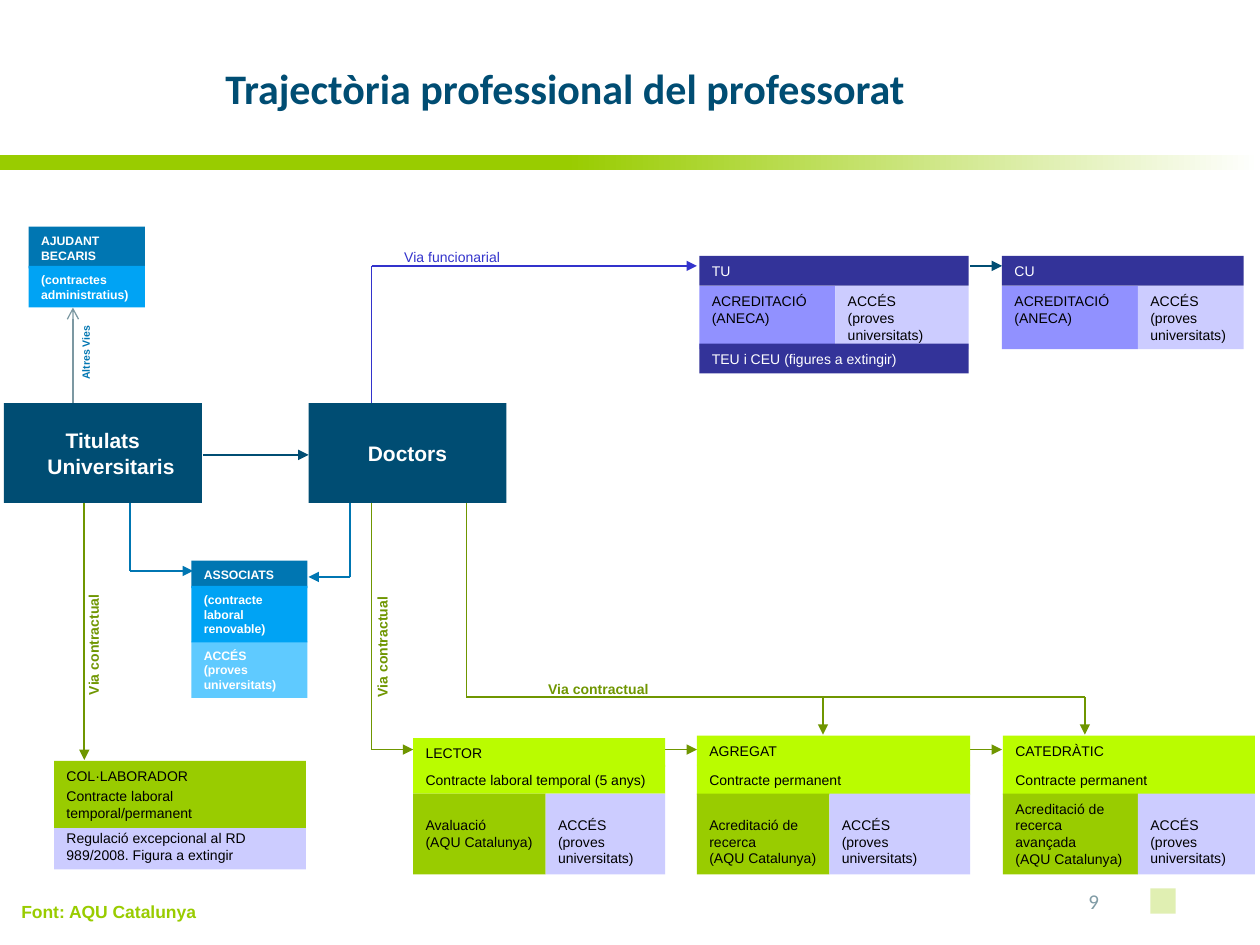
from itertools import pairwise

from lxml import etree
from pptx import Presentation
from pptx.dml.color import RGBColor
from pptx.enum.shapes import MSO_CONNECTOR as Connector, MSO_SHAPE as Shape
from pptx.enum.text import MSO_ANCHOR as Anchor, PP_ALIGN as Align
from pptx.oxml.ns import qn
from pptx.util import Cm, Pt

COLORS = {
    "navy": "004D73", "blue": "0076B2", "sky": "00A3F4", "pale_sky": "5FCAFF",
    "indigo": "333399", "violet": "9191FF", "lavender": "CCCCFF", "royal": "3333CC",
    "green": "99CC00", "lime": "BAFC00", "olive": "6F9600",
    "grey": "7C98A2", "slate": "809BA5", "white": "FFFFFF", "black": "000000",
}
LINE_HEIGHT = 0.33  # one 8 pt line, in cm

# Each card: left, width, text size, bold, rows.
# Each row: top, height, cells. Each cell: text, width (None = rest), fill,
# text colour, lines left free above the text.
ACCESS = "ACCÉS\n(proves universitats)"


def career_row(text, split, free_lines=1):
    return (16, 1.63, [(text, split, "green", "black", free_lines),
                       (ACCESS, None, "lavender", "black", 1)])


def full_row(top, height, text, fill, color="black"):
    return (top, height, [(text, None, fill, color, 0)])


STATE_ACCESS = (5.77, 1.27, [
    ("ACREDITACIÓ\n(ANECA)", 2.74, "violet", "black", 0),
    ("ACCÉS\n(proves\nuniversitats)", None, "lavender", "black", 0),
])
CARDS = [
    (0.58, 2.34, 7, True, [
        full_row(4.57, 0.84, "AJUDANT\nBECARIS", "blue", "white"),
        full_row(5.36, 0.84, "(contractes administratius)", "sky", "white"),
    ]),
    (3.86, 2.34, 7, True, [
        full_row(12.93, 1.14, "ACCÉS\n(proves\nuniversitats)", "pale_sky", "white"),
        full_row(11.3, 0.56, "ASSOCIATS", "blue", "white"),
        full_row(11.81, 1.14, "(contracte laboral renovable)", "sky", "white"),
    ]),
    (14.1, 5.43, 8, False, [
        full_row(5.16, 0.6, "TU", "indigo", "white"),
        STATE_ACCESS,
        full_row(6.93, 0.6, "TEU i CEU (figures a extingir)", "indigo", "white"),
    ]),
    (20.2, 4.87, 8, False, [
        full_row(5.16, 0.6, "CU", "indigo", "white"),
        STATE_ACCESS,
    ]),
    (1.09, 5.08, 8, False, [
        full_row(15.34, 0.58, "COL·LABORADOR", "green"),
        full_row(16.59, 0.94, "Regulació excepcional al RD 989/2008. Figura a extingir",
                 "lavender"),
        full_row(15.75, 0.94, "Contracte laboral temporal/permanent", "green"),
    ]),
    (8.33, 5.08, 8, False, [
        full_row(14.88, 0.58, "LECTOR", "lime"),
        full_row(15.42, 0.58, "Contracte laboral temporal (5 anys)", "lime"),
        career_row("Avaluació\n(AQU Catalunya)", 2.67),
    ]),
    (14.05, 5.51, 8, False, [
        full_row(14.83, 0.6, "AGREGAT", "lime"),
        full_row(15.42, 0.6, "Contracte permanent", "lime"),
        career_row("Acreditació de\nrecerca\n(AQU Catalunya)", 2.67),
    ]),
    (20.22, 5.08, 8, False, [
        full_row(14.83, 0.6, "CATEDRÀTIC", "lime"),
        full_row(15.42, 0.6, "Contracte permanent", "lime"),
        career_row("Acreditació de\nrecerca\navançada\n(AQU Catalunya)", 2.72, 0),
    ]),
]

STAGES = [("Titulats\nUniversitaris", 0.08), ("Doctors", 6.22)]

# Each route: points, colour, line width, arrowhead at the last point.
ROUTES = [
    ([(4.09, 9.17), (6.22, 9.17)], "navy", 1.25, "triangle"),
    ([(1.47, 8.13), (1.47, 6.2)], "grey", 0.75, "arrow"),
    ([(1.7, 10.13), (1.7, 15.32)], "olive", 1, "triangle"),
    ([(2.62, 10.13), (2.62, 11.51), (3.89, 11.51)], "blue", 1, "triangle"),
    ([(7.06, 10.13), (7.06, 11.63), (6.22, 11.63)], "blue", 1, "triangle"),
    ([(7.49, 8.13), (7.49, 5.36), (14.05, 5.36)], "royal", 1, "triangle"),
    ([(7.49, 10.13), (7.49, 15.11), (8.33, 15.11)], "olive", 1, "triangle"),
    ([(9.4, 10.13), (9.4, 14.05), (21.87, 14.05), (21.87, 14.81)],
     "olive", 0.75, "triangle"),
    ([(16.59, 14.05), (16.59, 14.81)], "olive", 0.75, "triangle"),
    ([(13.41, 15.11), (14.05, 15.11)], "olive", 1, "triangle"),
    ([(19.56, 15.11), (20.2, 15.11)], "olive", 0.75, "triangle"),
    ([(19.56, 5.36), (20.2, 5.36)], "navy", 0.75, "triangle"),
]

# Each label: text, box, size, bold, colour, rotation, font.
LABELS = [
    ("Via funcionarial", (7.9, 4.88, 2.46, 0.58), 8, False, "royal", 0, "Arial"),
    ("Via contractual", (10.8, 13.59, 2.54, 0.58), 8, True, "olive", 0, "Arial"),
    ("Via contractual", (6.43, 12.75, 2.54, 0.58), 8, True, "olive", 270, "Arial"),
    ("Via contractual", (0.61, 12.7, 2.54, 0.58), 8, True, "olive", 270, "Arial"),
    ("Altres Vies", (0.89, 6.81, 1.68, 0.51), 6, True, "blue", 270, "Arial"),
    ("Font: AQU Catalunya", (0.18, 18.03, 4.06, 0.69), 10, True, "green", 0, "Arial"),
    ("9", (21.69, 17.65, 1.4, 1.02), 12, False, "slate", 0, "Calibri"),
]


def rgb(name):
    return RGBColor.from_string(COLORS[name])


def write(shape, text, size, color, bold=False, font="Arial", align=Align.LEFT):
    shape.text_frame.text = text
    for paragraph in shape.text_frame.paragraphs:
        paragraph.alignment = align
        for run in paragraph.runs:
            run.font.name, run.font.size, run.font.bold = font, Pt(size), bold
            run.font.color.rgb = rgb(color)


def add_box(slide, left, top, width, height, fill):
    box = slide.shapes.add_shape(Shape.RECTANGLE, Cm(left), Cm(top), Cm(width), Cm(height))
    box.shadow.inherit = False
    box.line.fill.background()
    box.fill.solid()
    box.fill.fore_color.rgb = rgb(fill)
    box.text_frame.word_wrap = True
    box.text_frame.vertical_anchor = Anchor.TOP
    return box


def add_band(slide):
    band = add_box(slide, 0, 3.12, 25.4, 0.3, "green")
    band.fill.gradient()
    band.fill.gradient_angle = 0
    for stop, (position, color) in zip(band.fill.gradient_stops,
                                       [(0.45, "green"), (1, "white")]):
        stop.position = position
        stop.color.rgb = rgb(color)
    marker = add_box(slide, 23.19, 17.91, 0.51, 0.51, "green")
    tint = marker.fill._xPr.find(".//" + qn("a:srgbClr"))
    etree.SubElement(tint, qn("a:alpha"), val="30000")


def add_title(slide):
    title = slide.shapes.title
    title.left, title.top, title.width, title.height = Cm(4.29), Cm(0.96), Cm(19.41), Cm(1.6)
    title.text_frame.vertical_anchor = Anchor.MIDDLE
    write(title, "Trajectòria professional del professorat", 24, "navy", True, "Calibri")


def add_card(slide, left, width, size, bold, rows):
    for top, height, cells in rows:
        x = left
        for text, cell_width, fill, color, free_lines in cells:
            cell_width = cell_width or left + width - x
            box = add_box(slide, x, top, cell_width, height, fill)
            box.text_frame.margin_top = Cm(0.13 + free_lines * LINE_HEIGHT)
            write(box, text, size, color, bold)
            x += cell_width


def add_stage(slide, text, left):
    box = add_box(slide, left, 8.13, 3.99, 2.01, "navy")
    box.text_frame.vertical_anchor = Anchor.MIDDLE
    write(box, text, 12, "white", True, align=Align.CENTER)
    for paragraph in box.text_frame.paragraphs[1:]:
        paragraph._p.get_or_add_pPr().set("marL", str(Cm(0.33)))


def add_route(slide, points, color, width, head):
    for start, end in pairwise(points):
        line = slide.shapes.add_connector(Connector.STRAIGHT, *map(Cm, start + end))
        line.line.color.rgb = rgb(color)
        line.line.width = Pt(width)
        if end == points[-1]:
            etree.SubElement(line.line._get_or_add_ln(), qn("a:tailEnd"), type=head)
        etree.SubElement(line._element.spPr, qn("a:effectLst"))


def add_label(slide, text, box, size, bold, color, rotation, font):
    label = slide.shapes.add_textbox(*map(Cm, box))
    label.rotation = rotation
    label.text_frame.word_wrap = False
    label.text_frame.vertical_anchor = Anchor.MIDDLE
    write(label, text, size, color, bold, font)


def main():
    deck = Presentation()
    deck.slide_width, deck.slide_height = Cm(25.4), Cm(19.05)
    slide = deck.slides.add_slide(deck.slide_layouts[5])
    add_band(slide)
    add_title(slide)
    for route in ROUTES:
        add_route(slide, *route)
    for stage in STAGES:
        add_stage(slide, *stage)
    for card in CARDS:
        add_card(slide, *card)
    for label in LABELS:
        add_label(slide, *label)
    deck.save("out.pptx")


if __name__ == "__main__":
    main()
